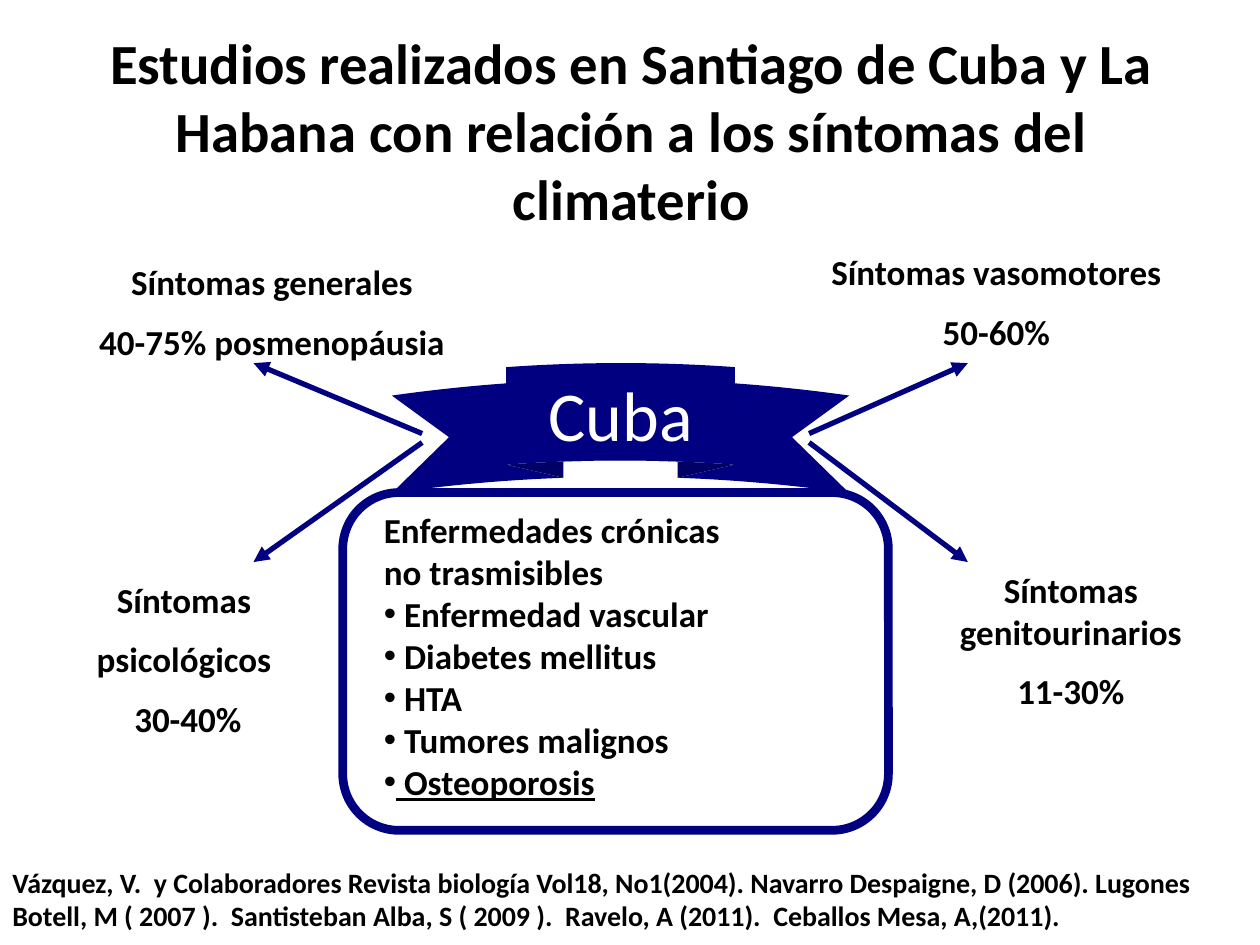
from dataclasses import dataclass

from pptx import Presentation
from pptx.dml.color import RGBColor
from pptx.enum.shapes import MSO_CONNECTOR, MSO_SHAPE
from pptx.enum.text import MSO_ANCHOR as Anchor, PP_ALIGN as Align
from pptx.oxml.ns import qn
from pptx.util import Cm, Pt
from lxml.etree import SubElement


@dataclass(frozen=True)
class Theme:
    font: str = "Calibri"
    navy: RGBColor = RGBColor(0x00, 0x00, 0x80)
    white: RGBColor = RGBColor(0xFF, 0xFF, 0xFF)
    black: RGBColor = RGBColor(0x00, 0x00, 0x00)
    title: float = 32.4
    banner: float = 40
    body: float = 20
    sources: float = 16
    frame_line: float = 5
    arrow_line: float = 3


class SlideBuilder:
    def __init__(self, slide, theme):
        self.shapes = slide.shapes
        self.theme = theme

    def shape(self, kind, box, fill, line=None, adjustments=()):
        shape = self.shapes.add_shape(kind, *map(Cm, box))
        shape.shadow.inherit = False
        for index, value in enumerate(adjustments):
            shape.adjustments[index] = value
        shape.fill.solid()
        shape.fill.fore_color.rgb = fill
        if line:
            shape.line.color.rgb = line
            shape.line.width = Pt(self.theme.frame_line)
        else:
            shape.line.fill.background()
        return shape

    def styled_run(self, paragraph, text, size, color=None, bold=True, underline=None):
        run = paragraph.add_run()
        run.text = text
        font = run.font
        font.name, font.size = self.theme.font, Pt(size)
        font.bold, font.underline = bold, underline
        font.color.rgb = color or self.theme.black

    def text(self, box, lines, size, align=Align.LEFT, gap=0, anchor=Anchor.TOP):
        frame = self.shapes.add_textbox(*map(Cm, box)).text_frame
        frame.word_wrap = True
        frame.vertical_anchor = anchor
        for index, line in enumerate(lines):
            paragraph = frame.paragraphs[0] if index == 0 else frame.add_paragraph()
            paragraph.alignment = align
            paragraph.space_before = Pt(gap if index else 0)
            self.styled_run(paragraph, line, size)
        return frame

    def bullet(self, frame, text, underline=None):
        paragraph = frame.add_paragraph()
        properties = paragraph._p.get_or_add_pPr()
        SubElement(properties, qn("a:buFont"), typeface="Arial")
        SubElement(properties, qn("a:buChar"), char="•")
        self.styled_run(paragraph, text, self.theme.body, underline=underline)

    def arrow(self, start, end):
        arrow = self.shapes.add_connector(
            MSO_CONNECTOR.STRAIGHT, *map(Cm, (*start, *end)))
        arrow.line.color.rgb = self.theme.navy
        arrow.line.width = Pt(self.theme.arrow_line)
        properties = arrow._element.spPr
        SubElement(properties.get_or_add_ln(), qn("a:tailEnd"), type="triangle")
        SubElement(properties, qn("a:effectLst"))


def main():
    theme = Theme()
    presentation = Presentation()
    presentation.slide_width, presentation.slide_height = Cm(25.4), Cm(19.05)
    slide = presentation.slides.add_slide(presentation.slide_layouts[6])
    builder = SlideBuilder(slide, theme)

    # Frame for the chronic diseases
    builder.shape(MSO_SHAPE.ROUNDED_RECTANGLE, (6.91, 9.93, 11, 6.81),
                  theme.white, theme.navy, (0.167,))

    # Title
    builder.text((1.3, 0.71, 22.86, 3.81),
                 ["Estudios realizados en Santiago de Cuba y La Habana "
                  "con relación a los síntomas del climaterio"],
                 theme.title, Align.CENTER, anchor=Anchor.MIDDLE)

    # Country banner
    banner = builder.shape(MSO_SHAPE.CURVED_UP_RIBBON, (7.9, 7.32, 9.22, 2.62),
                           theme.navy, adjustments=(0.25, 0.5, 0.125))
    banner.text_frame.vertical_anchor = Anchor.MIDDLE
    country = banner.text_frame.paragraphs[0]
    country.alignment = Align.CENTER
    builder.styled_run(country, "Cuba", theme.banner, theme.white, bold=False)

    # Arrows from the banner to the four symptom groups
    for inner_x, outer_x in ((8.51, 5.11), (16.31, 19.51)):
        for inner_y, outer_y in ((8.74, 7.32), (8.92, 11.33)):
            builder.arrow((inner_x, inner_y), (outer_x, outer_y))

    # Symptom groups
    symptoms = (
        ((0.89, 5.13, 9.19, 2.36), ["Síntomas generales", "40-75% posmenopáusia"]),
        ((0.69, 11.53, 6.2, 3.63), ["Síntomas ", "psicológicos ", "30-40%"]),
        ((15.49, 4.93, 9.19, 2.36), ["Síntomas vasomotores", "50-60%"]),
        ((18.49, 11.33, 6.2, 3.23), ["Síntomas genitourinarios", "11-30%"]),
    )
    for box, lines in symptoms:
        builder.text(box, lines, theme.body, Align.CENTER, gap=theme.body / 2)

    # Chronic diseases
    diseases = builder.text((7.49, 10.13, 9.6, 6.17),
                            ["Enfermedades crónicas", "no trasmisibles"], theme.body)
    for disease in (" Enfermedad vascular", " Diabetes mellitus", " HTA",
                    " Tumores malignos"):
        builder.bullet(diseases, disease)
    builder.bullet(diseases, " Osteoporosis", underline=True)

    # Sources
    builder.text((0, 17.32, 25.4, 1.63),
                 ["Vázquez, V.  y Colaboradores Revista biología Vol18, No1(2004). "
                  "Navarro Despaigne, D (2006). Lugones Botell, M ( 2007 ).  "
                  "Santisteban Alba, S ( 2009 ).  Ravelo, A (2011).  "
                  "Ceballos Mesa, A,(2011)."], theme.sources)

    presentation.save("out.pptx")


if __name__ == "__main__":
    main()
